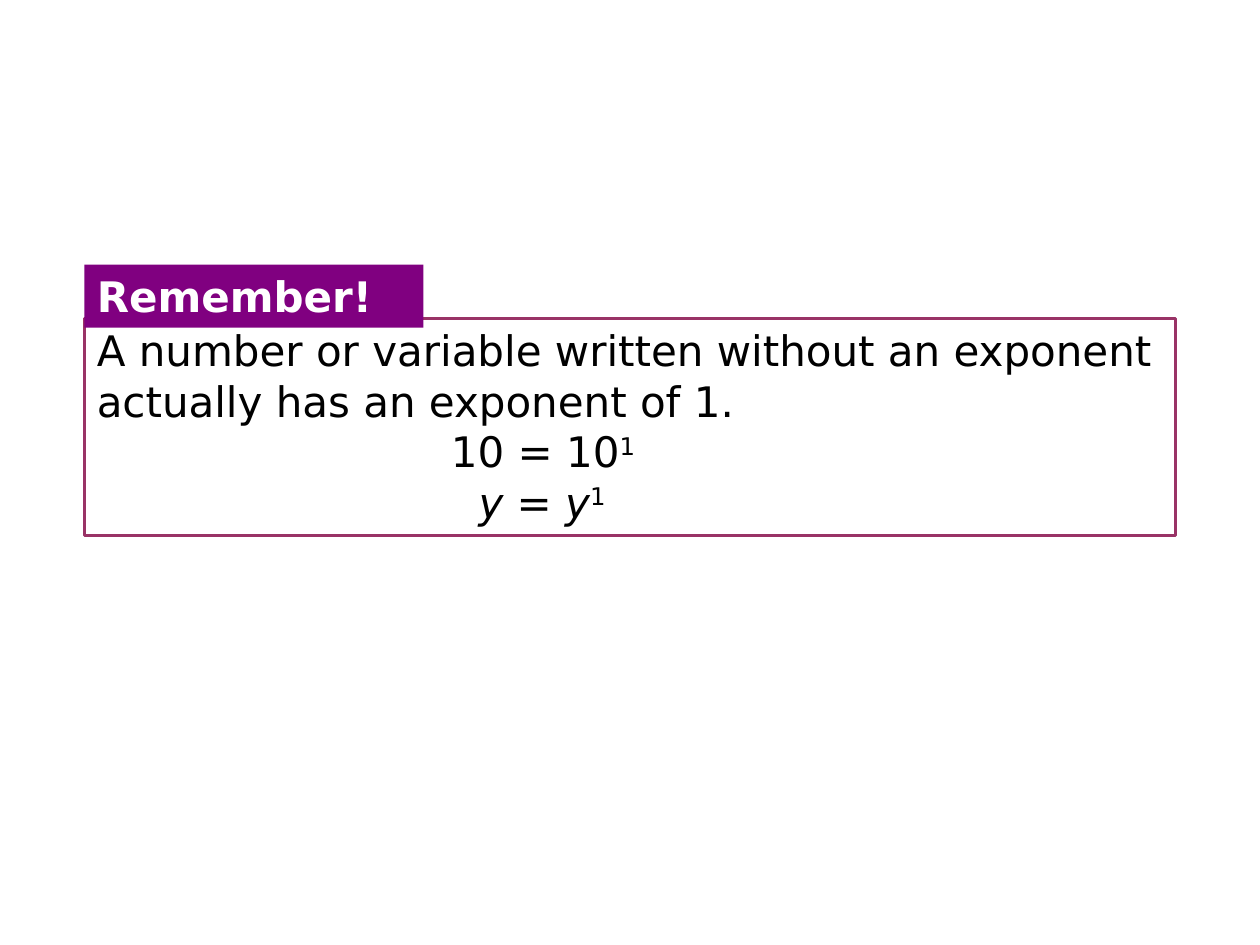
import pptx
import pptx.util
import pptx.dml.color
import pptx.enum.shapes
import pptx.enum.text

Pt = pptx.util.Pt
RGBColor = pptx.dml.color.RGBColor
PURPLE = RGBColor(0x80, 0x00, 0x80)
PLUM = RGBColor(0x99, 0x33, 0x66)
BLACK = RGBColor(0x00, 0x00, 0x00)
WHITE = RGBColor(0xFF, 0xFF, 0xFF)
RECT = pptx.enum.shapes.MSO_SHAPE.RECTANGLE


def write(shape, text, color=BLACK, bold=False, italic=False, power=None, wrap=True):
    frame = shape.text_frame
    frame.word_wrap = wrap
    frame.vertical_anchor = pptx.enum.text.MSO_ANCHOR.TOP
    para = frame.paragraphs[0]
    para.alignment = pptx.enum.text.PP_ALIGN.LEFT
    for part, slant in ((text, italic), (power, False)):
        if part is None:
            continue
        run = para.add_run()
        run.text = part
        font = run.font
        font.name = "DejaVu Sans"
        font.size = Pt(24)
        font.bold = bold
        font.italic = slant
        font.color.rgb = color
        if part is power:
            run._r.get_or_add_rPr().set("baseline", "30000")


deck = pptx.Presentation()
deck.slide_width = Pt(720)
deck.slide_height = Pt(540)
slide = deck.slides.add_slide(deck.slide_layouts[6])
group = slide.shapes.add_group_shape()

# Framed rule
frame = group.shapes.add_shape(RECT, Pt(48.24), Pt(182.16), Pt(623.52), Pt(123.84))
frame.shadow.inherit = False
frame.fill.background()
frame.line.color.rgb = PLUM
frame.line.width = Pt(1.5)
write(frame, "A number or variable written without an exponent actually has an exponent of 1.")

# Heading tab
tab = group.shapes.add_shape(RECT, Pt(48.24), Pt(151.2), Pt(193.68), Pt(36))
tab.shadow.inherit = False
tab.fill.solid()
tab.fill.fore_color.rgb = PURPLE
tab.line.fill.background()
write(tab, "Remember!", color=WHITE, bold=True)

# Examples
for text, italic, left, top, width in (
    ("10 = 10", False, 250.56, 239.76, 122.4),
    ("y = y", True, 266.4, 268.56, 89.28),
):
    box = group.shapes.add_textbox(Pt(left), Pt(top), Pt(width), Pt(36))
    write(box, text, italic=italic, power="1", wrap=False)

deck.save("out.pptx")
